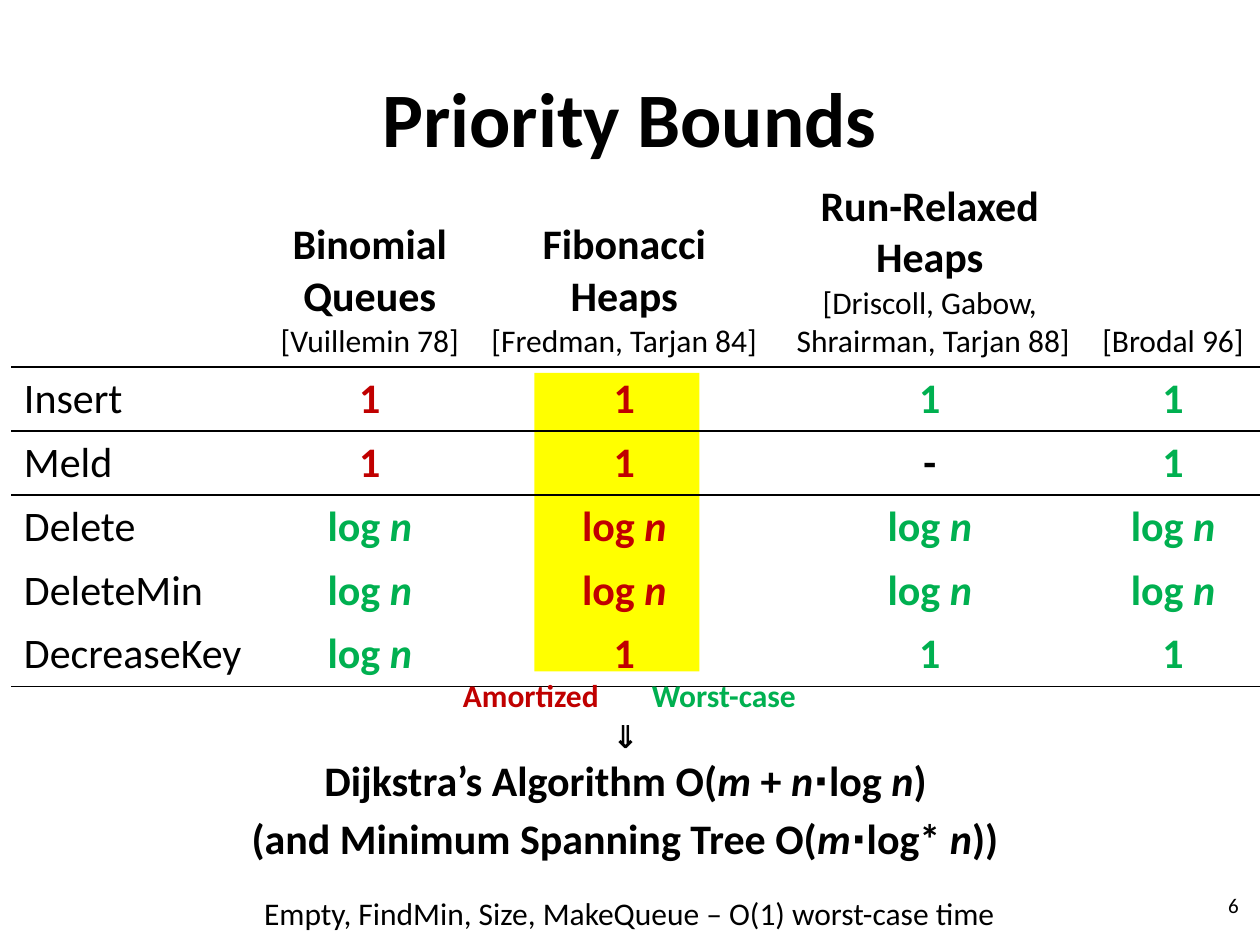
from dataclasses import dataclass

import pptx
import pptx.dml.color
import pptx.enum.shapes
import pptx.enum.text
import pptx.oxml
import pptx.oxml.ns
import pptx.util

COLORS = {"text": "000000", "amortized": "C00000", "worst": "00B050", "highlight": "FFFF00"}
FONT = "Calibri"
GRID_COLS, GRID_ROWS = 100, 75  # one grid unit is a tenth of an inch
UNIT = pptx.util.Inches(0.1)
NO_STYLE = "{2D5ABB26-0587-4C30-8999-92F81FD0307C}"
ALIGN = pptx.enum.text.PP_ALIGN
ANCHOR = pptx.enum.text.MSO_ANCHOR


@dataclass
class Line:
    """A paragraph; underscores enclose italics and bars separate colours."""
    text: str
    size: int = 24
    bold: bool = True
    colors: tuple = ("text",)


@dataclass
class Box:
    """A text box placed in grid units."""
    col: float
    row: float
    cols: float
    rows: float
    lines: list
    align: ALIGN = ALIGN.CENTER
    anchor: ANCHOR = ANCHOR.TOP
    wrap: bool = True


def units(*values: float) -> list:
    return [round(v * UNIT) for v in values]


def rgb(name: str):
    return pptx.dml.color.RGBColor.from_string(COLORS[name])


def write(tf, lines: list, *, align=ALIGN.CENTER) -> None:
    for i, line in enumerate(lines):
        p = tf.paragraphs[0] if i == 0 else tf.add_paragraph()
        p.alignment = align
        for part, color in zip(line.text.split("|"), line.colors):
            for j, piece in enumerate(part.split("_")):
                if not piece:
                    continue
                r = p.add_run()
                r.text = piece
                r.font.name = FONT
                r.font.size = pptx.util.Pt(line.size)
                r.font.bold = line.bold
                r.font.italic = j % 2 == 1
                r.font.color.rgb = rgb(color)


def add_box(s, box: Box) -> None:
    sp = s.shapes.add_textbox(*units(box.col, box.row, box.cols, box.rows))
    tf = sp.text_frame
    tf.word_wrap = box.wrap
    tf.vertical_anchor = box.anchor
    write(tf, box.lines, align=box.align)


def add_border(cell, side: str) -> None:
    """Rule one side of a cell, ahead of its fill as the schema requires."""
    ns = pptx.oxml.ns.nsdecls("a")
    ln = pptx.oxml.parse_xml(
        f'<a:{side} {ns} w="12700"><a:solidFill><a:srgbClr val="{COLORS["text"]}"/>'
        f'</a:solidFill></a:{side}>')
    cell._tc.get_or_add_tcPr().insert(0, ln)


# Table content: bold heading lines, then citation lines
HEADINGS = [
    ([], []),
    (["Binomial", "Queues"], ["[Vuillemin 78]"]),
    (["Fibonacci", "Heaps"], ["[Fredman, Tarjan 84]"]),
    (["Run-Relaxed", "Heaps"], ["[Driscoll, Gabow,", " Shrairman, Tarjan 88]"]),
    ([], ["[Brodal 96]"]),
]
LOG = "log _n_"
A, W, T = "amortized", "worst", "text"
BOUNDS = [
    ("Insert", [("1", A), ("1", A), ("1", W), ("1", W)]),
    ("Meld", [("1", A), ("1", A), ("-", T), ("1", W)]),
    ("Delete", [(LOG, W), (LOG, A), (LOG, W), (LOG, W)]),
    ("DeleteMin", [(LOG, W), (LOG, A), (LOG, W), (LOG, W)]),
    ("DecreaseKey", [(LOG, W), ("1", A), ("1", W), ("1", W)]),
]
COL_WIDTHS = [20.1, 16.7, 23.7, 24.8, 13.8]
HEAD_HEIGHT, ROW_HEIGHT = 14.9, 5
RULED_ROWS = (0, 1, 5)  # rows with a line beneath

BOXES = [
    Box(5, 3, 90, 12.5, [Line("Priority Bounds", 44)], anchor=ANCHOR.MIDDLE),
    Box(14.9, 70.5, 70.1, 4,
        [Line("Empty, FindMin, Size, MakeQueue – O(1) worst-case time", 18, False)]),
    Box(23.2, 53.2, 53.5, 4, [Line("Amortized\t|Worst-case", 18, colors=(A, W))]),
    Box(16.5, 56.4, 66.3, 8.1,
        [Line("⇓", 18), Line("Dijkstra’s Algorithm O(_m _+ _n_∙log _n_)")]),
    Box(18.9, 64, 61.4, 5,
        [Line("(and Minimum Spanning Tree O(_m_∙log* _n_))")], wrap=False),
    Box(76, 69.8, 23.3, 4, [Line("6", 12, False)], ALIGN.RIGHT, ANCHOR.MIDDLE),
]


def add_highlight(s) -> None:
    sp = s.shapes.add_shape(pptx.enum.shapes.MSO_SHAPE.RECTANGLE,
                            *units(42.4, 29.6, 13.1, 23.7))
    sp.shadow.inherit = False
    sp.fill.solid()
    sp.fill.fore_color.rgb = rgb("highlight")
    sp.line.fill.background()


def add_bounds_table(s) -> None:
    height = HEAD_HEIGHT + ROW_HEIGHT * len(BOUNDS)
    frame = s.shapes.add_table(len(BOUNDS) + 1, len(COL_WIDTHS),
                               *units(0.9, 13.9, sum(COL_WIDTHS), height))
    table = frame.table
    table.first_row = table.horz_banding = False
    table._tbl.tblPr.find(pptx.oxml.ns.qn("a:tableStyleId")).text = NO_STYLE
    for column, width in zip(table.columns, COL_WIDTHS):
        column.width = units(width)[0]
    for i, row in enumerate(table.rows):
        row.height = units(ROW_HEIGHT if i else HEAD_HEIGHT)[0]
        for cell in row.cells:
            cell.fill.background()
            if i in RULED_ROWS:
                add_border(cell, "lnB")
            if i - 1 in RULED_ROWS:
                add_border(cell, "lnT")
    # Headings
    for j, (names, sources) in enumerate(HEADINGS):
        cell = table.cell(0, j)
        cell.vertical_anchor = ANCHOR.BOTTOM
        write(cell.text_frame, [Line(t) for t in names] + [Line(t, 18, False) for t in sources])
    # Operations and their bounds
    for i, (operation, bounds) in enumerate(BOUNDS, 1):
        write(table.cell(i, 0).text_frame, [Line(operation, bold=False)], align=ALIGN.LEFT)
        for j, (bound, color) in enumerate(bounds, 1):
            write(table.cell(i, j).text_frame, [Line(bound, colors=(color,))])


def main() -> None:
    prs = pptx.Presentation()
    prs.slide_width, prs.slide_height = units(GRID_COLS, GRID_ROWS)
    s = prs.slides.add_slide(prs.slide_layouts[6])
    add_highlight(s)
    add_bounds_table(s)
    for box in BOXES:
        add_box(s, box)
    prs.save("out.pptx")


if __name__ == "__main__":
    main()
